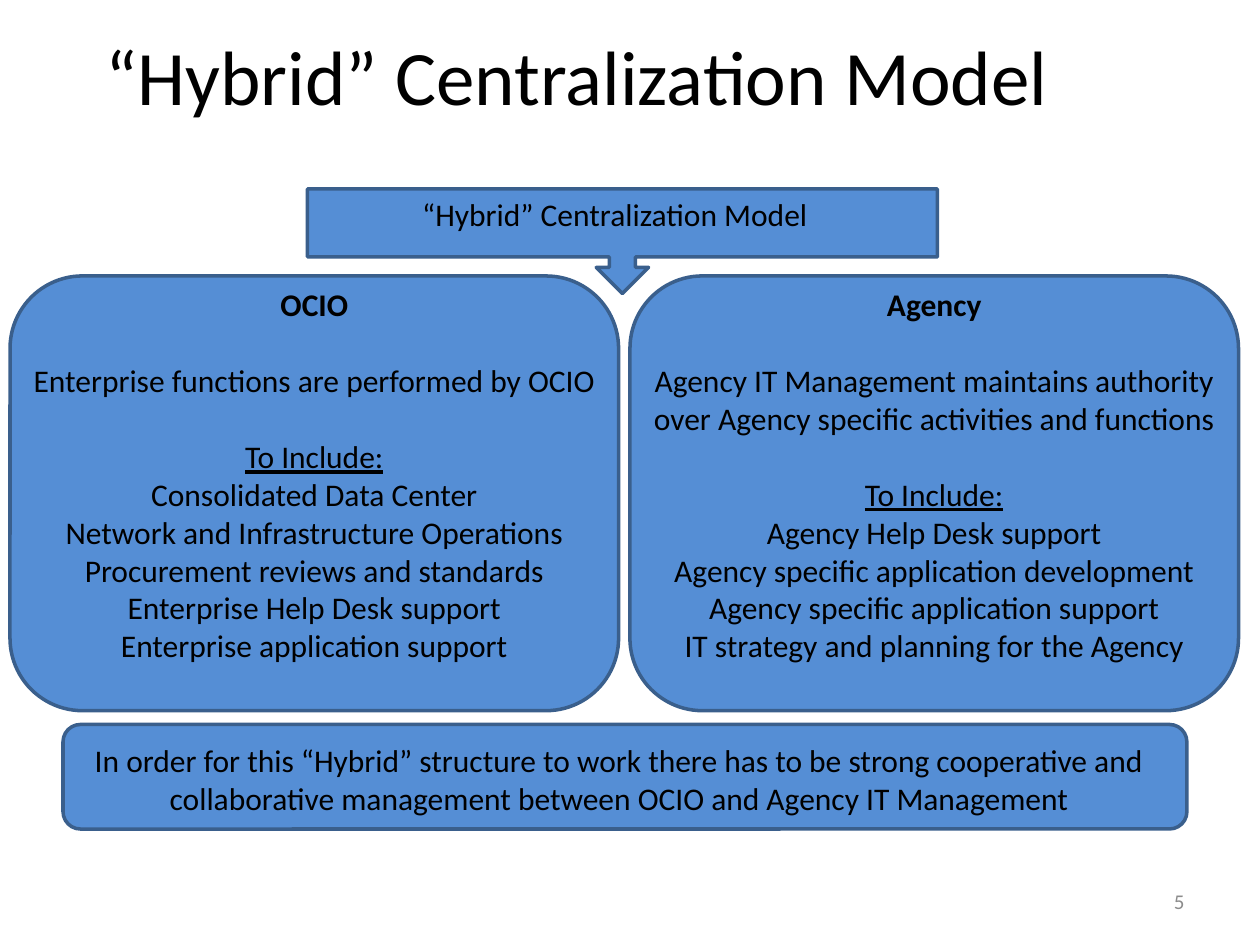
from dataclasses import dataclass

from pptx import Presentation
from pptx.dml.color import RGBColor
from pptx.enum.shapes import MSO_SHAPE
from pptx.enum.text import MSO_ANCHOR, PP_ALIGN
from pptx.util import Inches, Pt

CALLOUT = MSO_SHAPE.DOWN_ARROW_CALLOUT
ROUND = MSO_SHAPE.ROUNDED_RECTANGLE
TOP, MIDDLE = MSO_ANCHOR.TOP, MSO_ANCHOR.MIDDLE
CENTER, RIGHT = PP_ALIGN.CENTER, PP_ALIGN.RIGHT


@dataclass
class Theme:
    font: str = "Calibri"
    fill: RGBColor = RGBColor(0x55, 0x8E, 0xD5)
    line: RGBColor = RGBColor(0x3A, 0x5F, 0x8C)
    ink: RGBColor = RGBColor(0, 0, 0)
    gray: RGBColor = RGBColor(0x8C, 0x8C, 0x8C)
    title: int = 44
    body: int = 18
    small: int = 12
    gap: int = 22


theme = Theme()
prs = Presentation()
prs.slide_width, prs.slide_height = Inches(10), Inches(7.5)
slide = prs.slides.add_slide(prs.slide_layouts[6])


def add_panel(kind, *box):
    shape = slide.shapes.add_shape(kind, *map(Inches, box))
    shape.shadow.inherit = False
    shape.fill.solid()
    shape.fill.fore_color.rgb = theme.fill
    shape.line.color.rgb = theme.line
    shape.line.width = Pt(2)


def add_text(lines, box, size=theme.body, color=theme.ink, align=CENTER, anchor=TOP):
    frame = slide.shapes.add_textbox(*map(Inches, box)).text_frame
    frame.word_wrap = True
    frame.vertical_anchor = anchor
    frame.text = "\n".join(lines)
    for para in frame.paragraphs:
        para.alignment = align
        for run in para.runs:
            run.font.name = theme.font
            run.font.size = Pt(size)
            run.font.color.rgb = color
    return frame.paragraphs


# Title
add_text(["“Hybrid” Centralization Model"], (0.08, 0.08, 9, 1.03),
         theme.title, anchor=MIDDLE)

# Model callout, pointing between the two columns
add_panel(CALLOUT, 2.44, 1.5, 5, 0.83)
add_text(["“Hybrid” Centralization Model"], (2.42, 1.5, 4.92, 0.42))

# Columns: heading, summary, list label, then the items
columns = [
    (5, ["Agency",
         "Agency IT Management maintains authority over Agency specific "
         "activities and functions",
         "To Include:",
         "Agency Help Desk support",
         "Agency specific application development",
         "Agency specific application support",
         "IT strategy and planning for the Agency"]),
    (0.08, ["OCIO",
            "Enterprise functions are performed by OCIO",
            "To Include:",
            "Consolidated Data Center",
            "Network and Infrastructure Operations",
            "Procurement reviews and standards",
            "Enterprise Help Desk support",
            "Enterprise application support"]),
]
for left, lines in columns:
    add_panel(ROUND, left, 2.19, 4.83, 3.45)
    head, about, label, *items = add_text(lines, (left + 0.08, 2.21, 4.67, 3.13))
    head.runs[0].font.bold = True
    label.runs[0].font.underline = True
    about.space_before = label.space_before = Pt(theme.gap)

# Closing note
add_panel(ROUND, 0.5, 5.75, 8.92, 0.83)
add_text(["In order for this “Hybrid” structure to work there has to be strong "
          "cooperative and collaborative management between OCIO and Agency IT "
          "Management"], (0.5, 5.83, 8.83, 0.71))

# Slide number
add_text(["5"], (7.17, 6.95, 2.33, 0.4), theme.small, theme.gray, RIGHT, MIDDLE)

prs.save("out.pptx")
